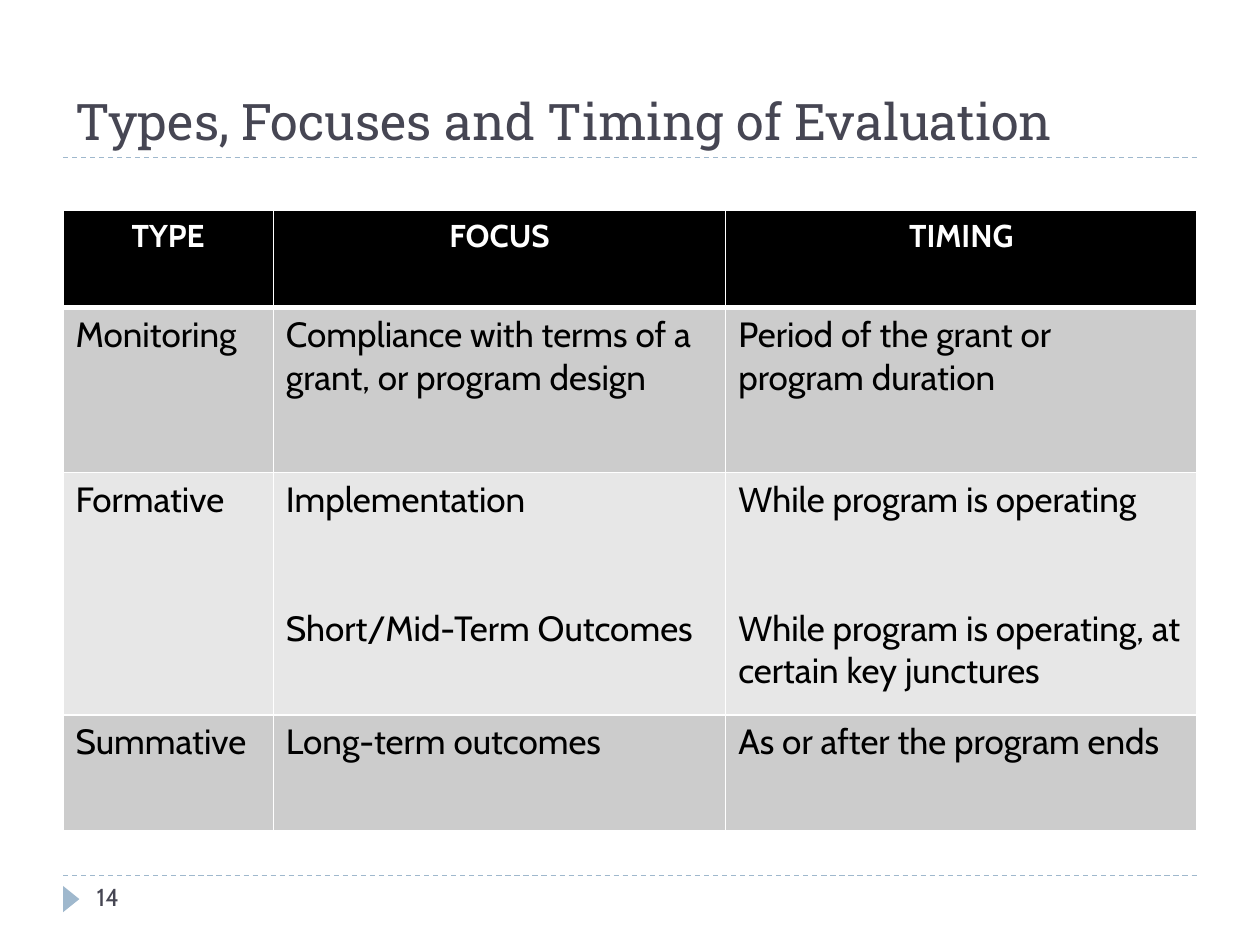
"""Build the slide on types, focuses and timing of evaluation."""
from dataclasses import dataclass

import lxml.etree
import pptx
import pptx.dml.color
import pptx.enum.dml
import pptx.enum.shapes
import pptx.enum.text
import pptx.oxml
import pptx.oxml.ns
import pptx.util
from pptx.util import Cm, Pt

COLORS = {
    "text": "464653",
    "accent": "9FB8CD",
    "black": "000000",
    "white": "FFFFFF",
    "dark_band": "CCCCCC",
    "light_band": "E7E7E7",
}
BODY_FONT = "Cabin"
TITLE_FONT = "Roboto Slab"
LEFT, WIDTH = 1.27, 22.86
COLUMN_WIDTHS = (4.24, 9.12, 9.5)
THIN, THICK = 1, 3


@dataclass(frozen=True)
class TableRow:
    height: float
    fill: str
    cells: tuple[str, ...]
    is_header: bool = False
    top_border: float = THIN
    bottom_border: float = THIN


ROWS = (
    TableRow(1.96, "black", ("TYPE", "FOCUS", "TIMING"), True, bottom_border=THICK),
    TableRow(3.33, "dark_band", (
        "Monitoring",
        "Compliance with terms of a grant, or program design",
        "Period of the grant or program duration",
    ), top_border=THICK),
    TableRow(4.88, "light_band", (
        "Formative",
        "Implementation\nShort/Mid-Term Outcomes",
        "While program is operating\nWhile program is operating, at certain key junctures",
    )),
    TableRow(2.34, "dark_band", (
        "Summative", "Long-term outcomes", "As or after the program ends",
    )),
)


def rgb(name: str) -> pptx.dml.color.RGBColor:
    return pptx.dml.color.RGBColor.from_string(COLORS[name])


def format_paragraph(paragraph, size: float, color: str, name: str = BODY_FONT,
                     bold: bool = False) -> None:
    font = paragraph.font
    font.name, font.size, font.bold = name, Pt(size), bold
    font.color.rgb = rgb(color)


def add_title(slide, text: str) -> None:
    title = slide.shapes.title
    title.left, title.top, title.width, title.height = Cm(LEFT), Cm(0.43), Cm(WIDTH), Cm(2.74)
    frame = title.text_frame
    frame.text = text
    frame.vertical_anchor = pptx.enum.text.MSO_ANCHOR.BOTTOM
    paragraph = frame.paragraphs[0]
    paragraph.alignment = pptx.enum.text.PP_ALIGN.LEFT
    format_paragraph(paragraph, 28.8, "text", TITLE_FONT)


def add_rule(slide, top: float) -> None:
    connector = slide.shapes.add_connector(
        pptx.enum.shapes.MSO_CONNECTOR.STRAIGHT, Cm(LEFT), Cm(top), Cm(LEFT + WIDTH), Cm(top))
    connector.line.color.rgb = rgb("accent")
    connector.line.width = Pt(0.75)
    connector.line.dash_style = pptx.enum.dml.MSO_LINE.DASH
    properties = connector.element.find(pptx.oxml.ns.qn("p:spPr"))
    lxml.etree.SubElement(properties, pptx.oxml.ns.qn("a:effectLst"))


def set_borders(cell, row: TableRow) -> None:
    properties = cell._tc.get_or_add_tcPr()
    widths = {"lnL": THIN, "lnR": THIN, "lnT": row.top_border, "lnB": row.bottom_border}
    for position, (tag, width) in enumerate(widths.items()):
        border = pptx.oxml.parse_xml(
            f'<a:{tag} {pptx.oxml.ns.nsdecls("a")} w="{Pt(width)}"><a:solidFill>'
            f'<a:srgbClr val="{COLORS["white"]}"/></a:solidFill></a:{tag}>')
        properties.insert(position, border)


def fill_cell(cell, text: str, row: TableRow) -> None:
    cell.text = text
    cell.fill.solid()
    cell.fill.fore_color.rgb = rgb(row.fill)
    set_borders(cell, row)
    for index, paragraph in enumerate(cell.text_frame.paragraphs):
        if row.is_header:
            paragraph.alignment = pptx.enum.text.PP_ALIGN.CENTER
            format_paragraph(paragraph, 18, "white", bold=True)
        else:
            format_paragraph(paragraph, 20, "black")
        if index:
            paragraph.space_before = Pt(49)


def add_evaluation_table(slide) -> None:
    table = slide.shapes.add_table(
        len(ROWS), len(COLUMN_WIDTHS), Cm(LEFT), Cm(4.24), Cm(WIDTH),
        Cm(sum(row.height for row in ROWS))).table
    table.first_row = table.horz_banding = False
    for column, width in zip(table.columns, COLUMN_WIDTHS):
        column.width = Cm(width)
    for table_row, row in zip(table.rows, ROWS):
        table_row.height = Cm(row.height)
        for cell, text in zip(table_row.cells, row.cells):
            fill_cell(cell, text, row)


def add_page_marker(slide, number: str) -> None:
    triangle = slide.shapes.add_shape(
        pptx.enum.shapes.MSO_SHAPE.ISOSCELES_TRIANGLE, Cm(1.17), Cm(17.96), Cm(0.53), Cm(0.33))
    triangle.rotation = 90
    triangle.shadow.inherit = False
    triangle.fill.solid()
    triangle.fill.fore_color.rgb = rgb("accent")
    triangle.line.fill.background()
    frame = slide.shapes.add_textbox(Cm(1.7), Cm(17.65), Cm(5.51), Cm(1.02)).text_frame
    frame.word_wrap = True
    frame.text = number
    format_paragraph(frame.paragraphs[0], 14, "text")


def main() -> None:
    presentation = pptx.Presentation()
    presentation.slide_width, presentation.slide_height = Cm(25.4), Cm(19.05)
    slide = presentation.slides.add_slide(presentation.slide_layouts.get_by_name("Title Only"))
    for top in (17.65, 3.17):
        add_rule(slide, top)
    add_title(slide, "Types, Focuses and Timing of Evaluation")
    add_evaluation_table(slide)
    add_page_marker(slide, "14")
    presentation.save("out.pptx")


if __name__ == "__main__":
    main()
